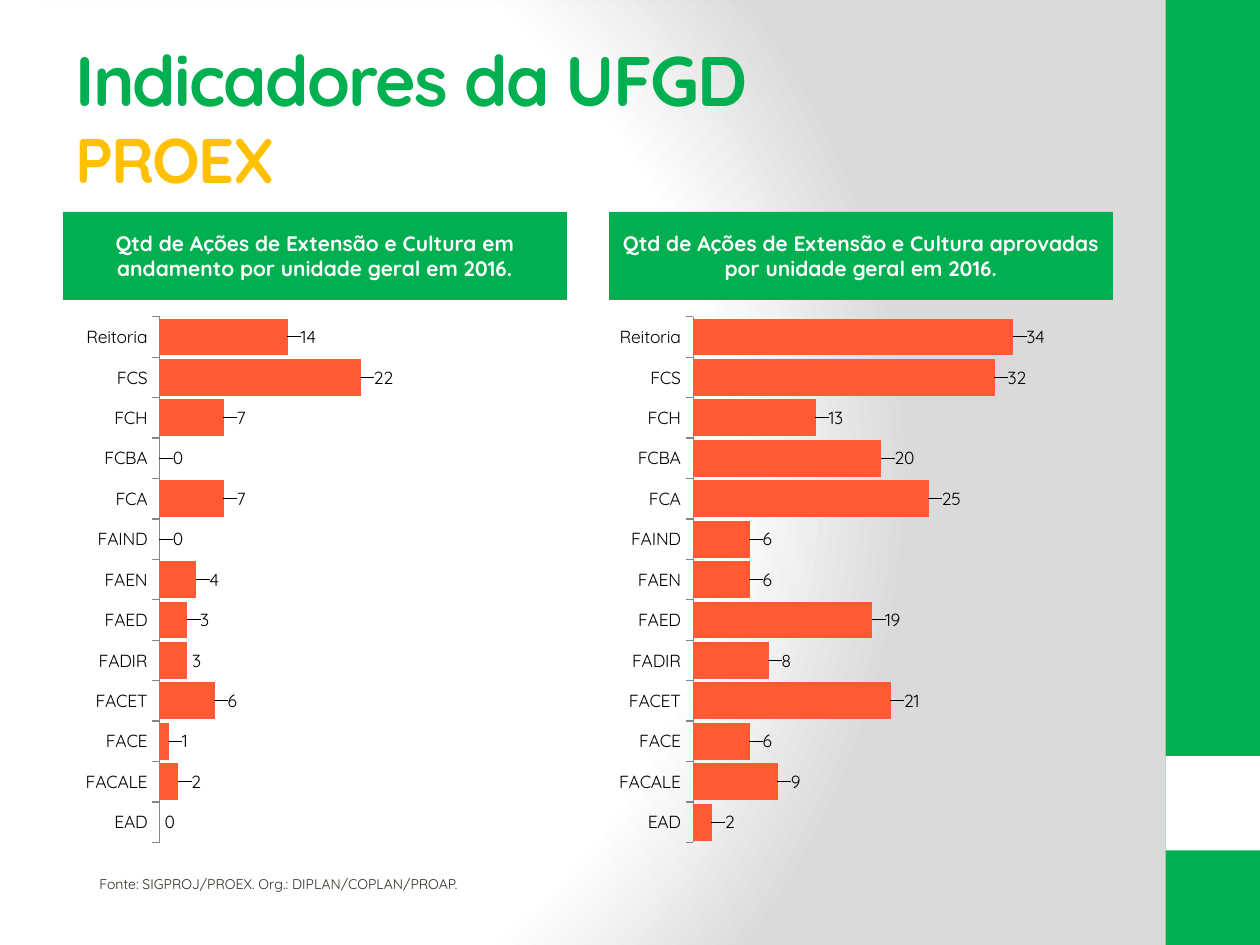
"""Build the PROEX indicators slide with two bar charts of extension actions."""
from dataclasses import dataclass

import pptx
import pptx.chart.data
import pptx.dml.color
import pptx.enum.chart
import pptx.enum.shapes
import pptx.enum.text
import pptx.oxml
import pptx.oxml.ns
import pptx.util

Pt = pptx.util.Pt
RGBColor = pptx.dml.color.RGBColor

GREEN = RGBColor(0x00, 0xB0, 0x50)
YELLOW = RGBColor(0xFF, 0xC0, 0x00)
ORANGE = RGBColor(0xFF, 0x5A, 0x33)
WHITE = RGBColor(0xFF, 0xFF, 0xFF)
BLACK = RGBColor(0x00, 0x00, 0x00)
BROWN = RGBColor(0x2F, 0x2B, 0x20)
GREY = RGBColor(0x86, 0x86, 0x86)
FONT = "Quicksand"

UNITS = ("EAD", "FACALE", "FACE", "FACET", "FADIR", "FAED", "FAEN",
         "FAIND", "FCA", "FCBA", "FCH", "FCS", "Reitoria")
PANEL_WIDTH = 288
HEADING_TOP, HEADING_HEIGHT = 121, 50.4
CHART_TOP, CHART_HEIGHT = 171.4, 311
LABEL_SHIFT = 0.016

BACKGROUND = """<p:bg %s><p:bgPr><a:gradFill rotWithShape="1"><a:gsLst>
<a:gs pos="0"><a:srgbClr val="FFFFFF"/></a:gs>
<a:gs pos="75000"><a:srgbClr val="FFFFFF"/></a:gs>
<a:gs pos="100000"><a:srgbClr val="DADADA"/></a:gs></a:gsLst>
<a:path path="circle"><a:fillToRect l="20000" t="50000" r="100000" b="50000"/></a:path>
</a:gradFill><a:effectLst/></p:bgPr></p:bg>""" % pptx.oxml.ns.nsdecls("p", "a")
SHADOW = """<a:effectLst %s><a:outerShdw blurRad="190500" dist="152400" dir="5400000"
sx="90000" sy="-19000" rotWithShape="0"><a:srgbClr val="000000"><a:alpha val="25000"/>
</a:srgbClr></a:outerShdw></a:effectLst>""" % pptx.oxml.ns.nsdecls("a")
NO_FILL = "<c:spPr %s><a:noFill/><a:ln><a:noFill/></a:ln></c:spPr>" % pptx.oxml.ns.nsdecls("c", "a")


@dataclass(frozen=True)
class Panel:
    """A heading with the bar chart below it."""
    heading: str
    left: float
    values: tuple[int, ...]
    plot_left: float
    plot_width: float
    unshifted: tuple[int, ...] = ()


PANELS = (
    Panel("Qtd de Ações de Extensão e Cultura em andamento por unidade geral em 2016.",
          36, (0, 2, 1, 6, 3, 3, 4, 0, 7, 0, 7, 22, 14), 0.192, 0.761, (0, 4)),
    Panel("Qtd de Ações de Extensão e Cultura aprovadas por unidade geral em 2016.",
          348, (2, 9, 6, 21, 8, 19, 6, 6, 25, 20, 13, 32, 34), 0.167, 0.785),
)


def place(shape, left: float, top: float, width: float, height: float) -> None:
    """Position a shape in points."""
    shape.left, shape.top = Pt(left), Pt(top)
    shape.width, shape.height = Pt(width), Pt(height)


def style_font(font, size: float, color: RGBColor, bold: bool = False) -> None:
    """Apply the slide typeface with a size and colour."""
    font.name, font.size, font.bold = FONT, Pt(size), bold
    font.color.rgb = color


def add_span(para, text: str, size: float, color: RGBColor, bold: bool = False):
    """Append one formatted run."""
    span = para.add_run()
    span.text = text
    style_font(span.font, size, color, bold)
    return span


def add_band(page, top: float, height: float, color: RGBColor) -> None:
    """Draw a block of the right-hand band."""
    band = page.shapes.add_shape(pptx.enum.shapes.MSO_SHAPE.RECTANGLE,
                                 Pt(666), Pt(top), Pt(54), Pt(height))
    band.shadow.inherit = False
    band.fill.solid()
    band.fill.fore_color.rgb = color
    band.line.fill.background()


def fill_title(title) -> None:
    """Write the two-line title."""
    place(title, 36, 21.6, 600, 90)
    frame = title.text_frame
    frame.auto_size = pptx.enum.text.MSO_AUTO_SIZE.NONE
    frame.vertical_anchor = pptx.enum.text.MSO_ANCHOR.MIDDLE
    para = frame.paragraphs[0]
    para.alignment = pptx.enum.text.PP_ALIGN.LEFT
    first = add_span(para, "Indicadores da UFGD", 40, GREEN, True)
    para.add_line_break()
    second = add_span(para, "PROEX", 36, YELLOW, True)
    for span in (first, second):
        span.font._element.set("spc", "-100")


def fill_heading(box, panel: Panel) -> None:
    """Format a body placeholder as a panel heading."""
    place(box, panel.left, HEADING_TOP, PANEL_WIDTH, HEADING_HEIGHT)
    box.fill.solid()
    box.fill.fore_color.rgb = GREEN
    box._element.spPr.append(pptx.oxml.parse_xml(SHADOW))
    frame = box.text_frame
    frame.auto_size = pptx.enum.text.MSO_AUTO_SIZE.NONE
    frame.vertical_anchor = pptx.enum.text.MSO_ANCHOR.MIDDLE
    para = frame.paragraphs[0]
    para.alignment = pptx.enum.text.PP_ALIGN.CENTER
    add_span(para, panel.heading, 12, WHITE, True)


def manual_layout(settings: dict[str, object]):
    """Make a manual chart layout element."""
    items = "".join(f'<c:{name} val="{value}"/>' for name, value in settings.items())
    return pptx.oxml.parse_xml(f"<c:layout {pptx.oxml.ns.nsdecls('c')}>"
                               f"<c:manualLayout>{items}</c:manualLayout></c:layout>")


def add_bar_chart(page, panel: Panel) -> None:
    """Draw the bar chart of a panel."""
    data = pptx.chart.data.CategoryChartData()
    data.categories = UNITS
    data.add_series("Series 1", panel.values)
    chart = page.shapes.add_chart(
        pptx.enum.chart.XL_CHART_TYPE.BAR_CLUSTERED, Pt(panel.left), Pt(CHART_TOP),
        Pt(PANEL_WIDTH), Pt(CHART_HEIGHT), data).chart
    chart.has_title = chart.has_legend = False
    style_font(chart.font, 10, BLACK)

    units = chart.category_axis
    units.major_tick_mark = pptx.enum.chart.XL_TICK_MARK.OUTSIDE
    units.has_major_gridlines = False
    units.format.line.color.rgb = GREY
    units.format.line.width = Pt(0.75)
    style_font(units.tick_labels.font, 10, BLACK)
    scale = chart.value_axis
    scale.minimum_scale, scale.maximum_scale = 0, 42
    scale.has_major_gridlines = False
    scale.visible = False

    plot = chart.plots[0]
    plot.gap_width = 10
    plot.vary_by_categories = False
    series = plot.series[0]
    series.format.fill.solid()
    series.format.fill.fore_color.rgb = ORANGE
    outside = pptx.enum.chart.XL_LABEL_POSITION.OUTSIDE_END
    labels = series.data_labels
    labels.show_value = True
    labels.position = outside
    style_font(labels.font, 10, BLACK)
    for index in range(len(UNITS)):
        if index not in panel.unshifted:
            series.points[index].data_label.position = outside
    qn = pptx.oxml.ns.qn
    for label in series._element.iter(qn("c:dLbl")):
        label.insert(1, manual_layout({"x": LABEL_SHIFT, "y": 0}))

    area = chart._chartSpace.chart.plotArea
    for layout in area.findall(qn("c:layout")):
        area.remove(layout)
    area.insert(0, manual_layout({
        "layoutTarget": "inner", "xMode": "edge", "yMode": "edge",
        "x": panel.plot_left, "y": 0.031, "w": panel.plot_width, "h": 0.966}))
    chart._chartSpace.chart.addnext(pptx.oxml.parse_xml(NO_FILL))


def add_source(page) -> None:
    """Write the source line."""
    box = page.shapes.add_textbox(Pt(49.7), Pt(496.8), Pt(244), Pt(17.3))
    box.text_frame.word_wrap = True
    add_span(box.text_frame.paragraphs[0],
             "Fonte: SIGPROJ/PROEX. Org.: DIPLAN/COPLAN/PROAP.", 8, BROWN)


def main() -> None:
    """Assemble and save the deck."""
    deck = pptx.Presentation()
    deck.slide_width, deck.slide_height = Pt(720), Pt(540)
    page = deck.slides.add_slide(deck.slide_layouts.get_by_name("Comparison"))
    page._element.cSld.insert(0, pptx.oxml.parse_xml(BACKGROUND))
    holders = {holder.placeholder_format.idx: holder for holder in page.placeholders}
    for index in (2, 4):
        holders[index]._element.getparent().remove(holders[index]._element)
    add_band(page, 0, 540, GREEN)
    add_band(page, 432, 54, WHITE)
    fill_title(page.shapes.title)
    for index, panel in zip((1, 3), PANELS):
        fill_heading(holders[index], panel)
        add_bar_chart(page, panel)
    add_source(page)
    deck.save("out.pptx")


if __name__ == "__main__":
    main()
